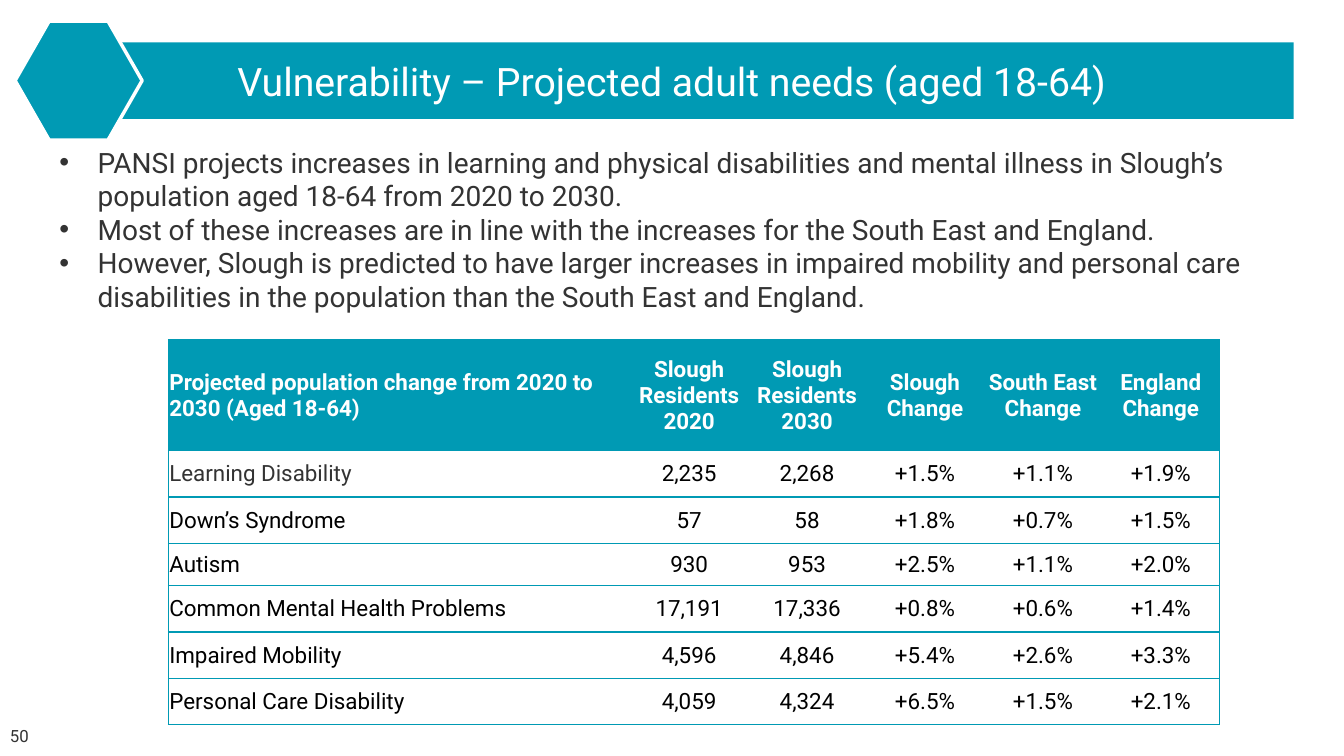
from dataclasses import dataclass

from lxml import etree
from pptx import Presentation
from pptx.dml.color import RGBColor
from pptx.enum.shapes import MSO_SHAPE
from pptx.enum.text import MSO_ANCHOR, PP_ALIGN
from pptx.oxml.ns import qn
from pptx.util import Inches, Pt

RECTANGLE, HEXAGON = MSO_SHAPE.RECTANGLE, MSO_SHAPE.HEXAGON
LEFT, CENTER = PP_ALIGN.LEFT, PP_ALIGN.CENTER
TOP, MIDDLE = MSO_ANCHOR.TOP, MSO_ANCHOR.MIDDLE


@dataclass(frozen=True)
class Theme:
    font: str = "Roboto"
    teal: str = "009AB4"
    white: str = "FFFFFF"
    grey: str = "333333"
    black: str = "000000"
    title: int = 28
    body: int = 20
    table: int = 16
    number: int = 12
    border: float = 1
    badge_line: float = 2.5


THEME = Theme()

TITLE = "Vulnerability – Projected adult needs (aged 18-64)"
FINDINGS = [
    "PANSI projects increases in learning and physical disabilities and mental illness "
    "in Slough’s population aged 18-64 from 2020 to 2030.",
    "Most of these increases are in line with the increases for the South East and England.",
    "However, Slough is predicted to have larger increases in impaired mobility and personal "
    "care disabilities in the population than the South East and England.",
]
PROJECTIONS = [
    ["Projected population change from 2020 to 2030 (Aged 18-64)", "Slough Residents 2020",
     "Slough Residents 2030", "Slough Change", "South East Change", "England Change"],
    ["Learning Disability", "2,235", "2,268", "+1.5%", "+1.1%", "+1.9%"],
    ["Down’s Syndrome", "57", "58", "+1.8%", "+0.7%", "+1.5%"],
    ["Autism", "930", "953", "+2.5%", "+1.1%", "+2.0%"],
    ["Common Mental Health Problems", "17,191", "17,336", "+0.8%", "+0.6%", "+1.4%"],
    ["Impaired Mobility", "4,596", "4,846", "+5.4%", "+2.6%", "+3.3%"],
    ["Personal Care Disability", "4,059", "4,324", "+6.5%", "+1.5%", "+2.1%"],
]
COLUMN_WIDTHS = [4.58] + [1.17] * 5
ROW_HEIGHTS = [1.1, 0.46, 0.46, 0.42, 0.46, 0.46, 0.46]


def inches(box):
    return [Inches(length) for length in box]


def write(para, text, size, color, align=LEFT, bold=False):
    para.alignment = align
    span = para.add_run()
    span.text = text
    formats = {"name": THEME.font, "size": Pt(size), "bold": bold}
    for name, value in formats.items():
        setattr(span.font, name, value)
    span.font.color.rgb = RGBColor.from_string(color)


def add_solid(page, kind, box):
    """Add a teal preset shape without shadow or outline."""
    shape = page.shapes.add_shape(kind, *inches(box))
    shape.shadow.inherit = False
    shape.fill.solid()
    shape.fill.fore_color.rgb = RGBColor.from_string(THEME.teal)
    shape.line.fill.background()
    return shape


def add_frame(page, box, anchor):
    frame = page.shapes.add_textbox(*inches(box)).text_frame
    frame.word_wrap = True
    frame.vertical_anchor = anchor
    return frame


def add_header(page, box):
    left, top, _, height = box
    banner = add_solid(page, RECTANGLE, box)
    banner.text_frame.word_wrap = True
    banner.text_frame.vertical_anchor = MIDDLE
    write(banner.text_frame.paragraphs[0], TITLE, THEME.title, THEME.white, CENTER)

    badge_height = 1.18
    badge_box = (left - 0.34, top + (height - badge_height) / 2, 1.26, badge_height)
    badge = add_solid(page, HEXAGON, badge_box)
    badge.adjustments[0] = 0.286
    badge.line.color.rgb = RGBColor.from_string(THEME.white)
    badge.line.width = Pt(THEME.badge_line)


def add_bullet(para):
    properties = para._p.get_or_add_pPr()
    indent = Inches(0.38)
    properties.set("marL", str(indent))
    properties.set("indent", str(-indent))
    etree.SubElement(properties, qn("a:buFont"), typeface="Arial")
    etree.SubElement(properties, qn("a:buChar"), char="•")


def add_findings(page, box):
    frame = add_frame(page, box, TOP)
    for index, finding in enumerate(FINDINGS):
        para = frame.add_paragraph() if index else frame.paragraphs[0]
        add_bullet(para)
        write(para, finding, THEME.body, THEME.grey)


def set_borders(cell, drawn_sides):
    """Draw teal borders on the given sides and clear the others."""
    properties = cell._tc.get_or_add_tcPr()
    for side in "LRTB":
        line = etree.SubElement(properties, qn(f"a:ln{side}"), w=str(Pt(THEME.border)))
        if side in drawn_sides:
            fill = etree.SubElement(line, qn("a:solidFill"))
            etree.SubElement(fill, qn("a:srgbClr"), val=THEME.teal)
        else:
            etree.SubElement(line, qn("a:noFill"))


def fill_cell(cell, text, row, column):
    header, first, last = row == 0, column == 0, column == len(COLUMN_WIDTHS) - 1
    formats = {"vertical_anchor": MIDDLE, "margin_left": Inches(0.01),
               "margin_right": Inches(0.01), "margin_top": Inches(0.01), "margin_bottom": 0}
    for name, value in formats.items():
        setattr(cell, name, value)
    set_borders(cell, "TB" + "L" * first + "R" * last)
    if header:
        cell.fill.solid()
        cell.fill.fore_color.rgb = RGBColor.from_string(THEME.teal)
        color = THEME.white
    else:
        cell.fill.background()
        color = THEME.grey if row == 1 and first else THEME.black
    write(cell.text_frame.paragraphs[0], text, THEME.table, color,
          LEFT if first else CENTER, header)


def add_projections(page, left, top):
    box = (left, top, sum(COLUMN_WIDTHS), sum(ROW_HEIGHTS))
    table = page.shapes.add_table(len(ROW_HEIGHTS), len(COLUMN_WIDTHS), *inches(box)).table
    table.horz_banding = False
    for column, width in zip(table.columns, COLUMN_WIDTHS):
        column.width = Inches(width)
    for row, height in zip(table.rows, ROW_HEIGHTS):
        row.height = Inches(height)
    for row, texts in enumerate(PROJECTIONS):
        for column, text in enumerate(texts):
            fill_cell(table.cell(row, column), text, row, column)


def add_page_number(page, box):
    frame = add_frame(page, box, MIDDLE)
    write(frame.paragraphs[0], "50", THEME.number, THEME.grey)


def main():
    deck = Presentation()
    deck.slide_width, deck.slide_height = Inches(13.33), Inches(7.5)
    page = deck.slides.add_slide(deck.slide_layouts[6])
    add_header(page, (0.49, 0.42, 12.34, 0.76))
    add_findings(page, (0.49, 1.39, 12.34, 1.78))
    add_projections(page, 1.67, 3.37)
    add_page_number(page, (0, 7.1, 3, 0.4))
    deck.save("out.pptx")


if __name__ == "__main__":
    main()
